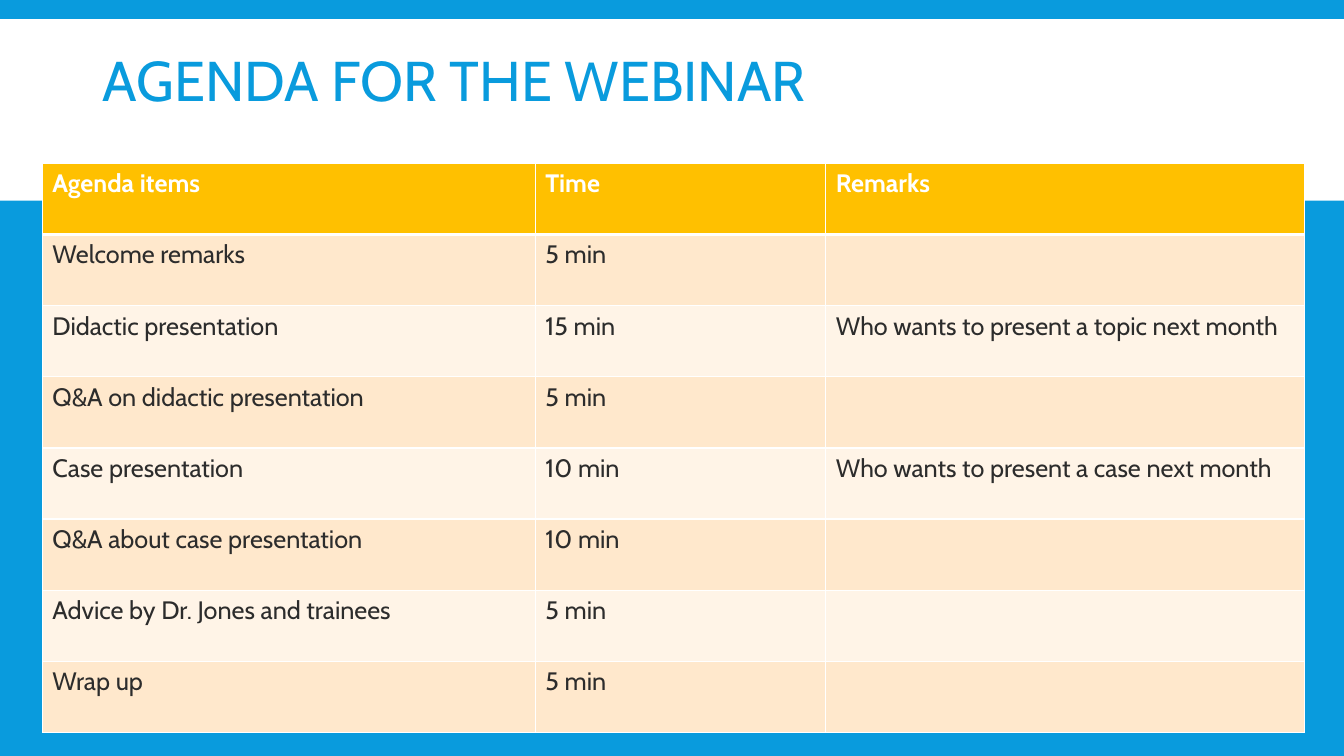
import pptx
import pptx.dml.color
import pptx.enum.shapes
import pptx.enum.text
import pptx.oxml.ns
import pptx.util
import lxml.etree
from dataclasses import dataclass


@dataclass(frozen=True)
class Theme:
    font: str = "Cabin"
    title_size: int = 40
    table_size: int = 18
    blue: str = "099BDD"
    white: str = "FFFFFF"
    header: str = "FFC000"
    dark_row: str = "FFE8CC"
    light_row: str = "FFF4E7"
    ink: str = "2C2C2C"


theme = Theme()
rgb = pptx.dml.color.RGBColor.from_string
inches = pptx.util.Inches


def add_run(paragraph, text, size, color, bold=False):
    run = paragraph.add_run()
    run.text = text
    run.font.name = theme.font
    run.font.size = pptx.util.Pt(size)
    run.font.bold = bold
    run.font.color.rgb = rgb(color)


def add_border(cell, side, width):
    properties = cell._tc.get_or_add_tcPr()
    line = lxml.etree.SubElement(
        properties, pptx.oxml.ns.qn("a:" + side), w=str(pptx.util.Pt(width)))
    fill = lxml.etree.SubElement(line, pptx.oxml.ns.qn("a:solidFill"))
    lxml.etree.SubElement(fill, pptx.oxml.ns.qn("a:srgbClr"), val=theme.white)


# Slide with a blue background
presentation = pptx.Presentation()
presentation.slide_width = inches(13.33)
presentation.slide_height = inches(7.5)
slide = presentation.slides.add_slide(presentation.slide_layouts[5])
slide.background.fill.solid()
slide.background.fill.fore_color.rgb = rgb(theme.blue)

# White band behind the title
band = slide.shapes.add_shape(
    pptx.enum.shapes.MSO_SHAPE.RECTANGLE,
    0, inches(0.19), presentation.slide_width, inches(1.8))
band.shadow.inherit = False
band.fill.solid()
band.fill.fore_color.rgb = rgb(theme.white)
band.line.fill.background()

# Title
title = slide.shapes.title
title.element.addprevious(band.element)
title.left, title.top = inches(0.92), inches(0.11)
title.width, title.height = inches(11.5), inches(1.45)
title.text_frame.word_wrap = True
title.text_frame.vertical_anchor = pptx.enum.text.MSO_ANCHOR.MIDDLE
paragraph = title.text_frame.paragraphs[0]
paragraph.alignment = pptx.enum.text.PP_ALIGN.LEFT
paragraph.line_spacing = 0.85
add_run(paragraph, "AGENDA FOR THE WEBINAR", theme.title_size, theme.blue)

# Agenda table
agenda = [
    ("Agenda items", "Time", "Remarks"),
    ("Welcome remarks", "5 min", ""),
    ("Didactic presentation", "15 min", "Who wants to present a topic next month"),
    ("Q&A on didactic presentation", "5 min", ""),
    ("Case presentation", "10 min", "Who wants to present a case next month"),
    ("Q&A about case presentation", "10 min", ""),
    ("Advice by Dr. Jones and trainees", "5 min", ""),
    ("Wrap up", "5 min", ""),
]
column_widths = [4.89, 2.88, 4.75]
table = slide.shapes.add_table(
    len(agenda), len(column_widths), inches(0.42), inches(1.62),
    inches(sum(column_widths)), inches(5.65)).table
for column, width in zip(table.columns, column_widths):
    column.width = inches(width)

for row_index, entries in enumerate(agenda):
    is_header = row_index == 0
    if is_header:
        row_fill = theme.header
    else:
        row_fill = theme.dark_row if row_index % 2 else theme.light_row
    for column_index, text in enumerate(entries):
        cell = table.cell(row_index, column_index)
        for side in ("lnL", "lnR", "lnT", "lnB"):
            header_edge = (side == "lnB" and is_header) or (side == "lnT" and row_index == 1)
            add_border(cell, side, 3 if header_edge else 1)
        cell.fill.solid()
        cell.fill.fore_color.rgb = rgb(row_fill)
        if text:
            add_run(cell.text_frame.paragraphs[0], text, theme.table_size,
                    theme.white if is_header else theme.ink, is_header)

presentation.save("out.pptx")
